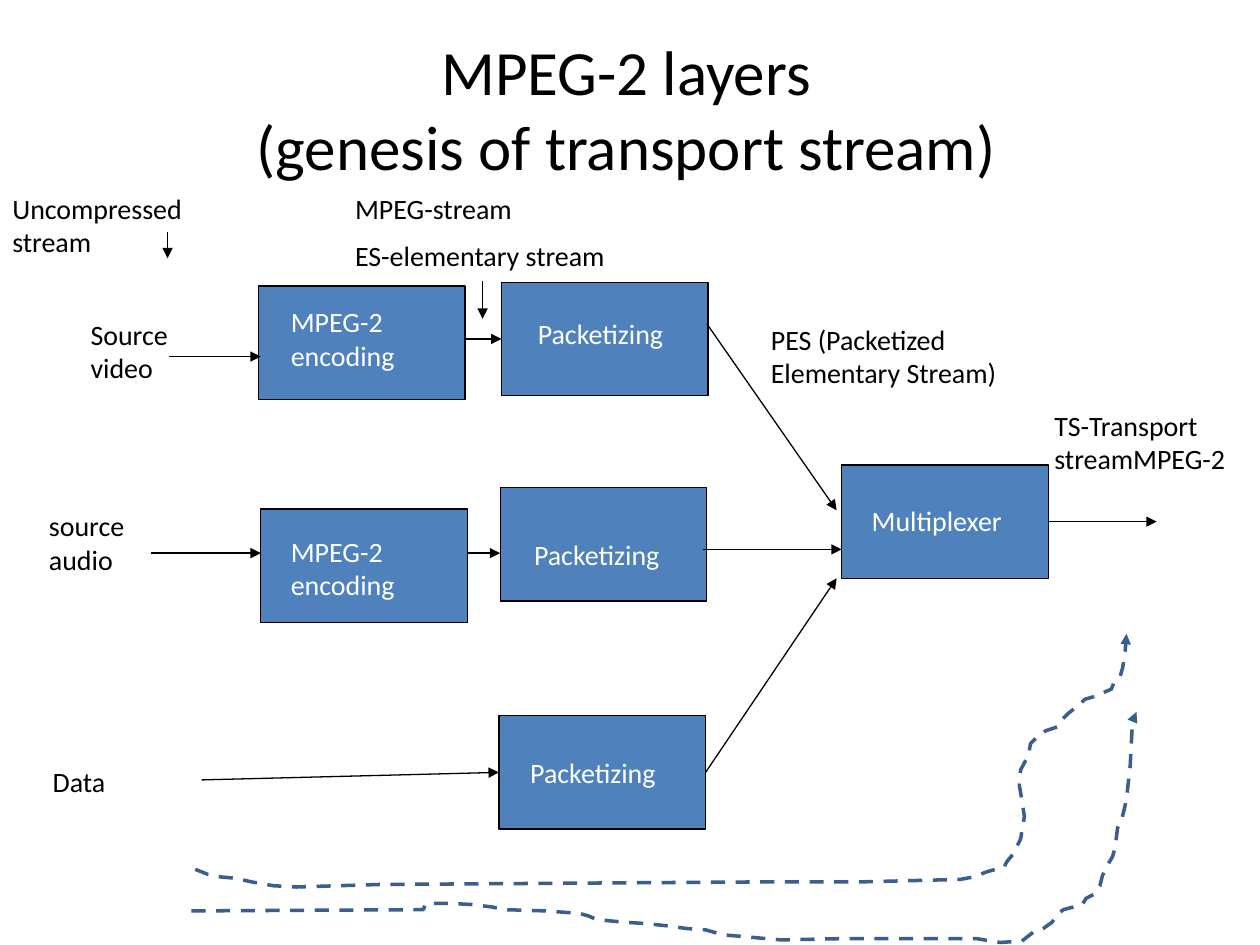
import pptx
import pptx.dml.color
import pptx.enum.dml
import pptx.enum.shapes
import pptx.enum.text
import pptx.oxml
import pptx.oxml.ns
import pptx.util
from pptx.util import Inches

THEME = {
    "font": "Calibri", "title_size": 36, "text_size": 16, "space": 8,
    "ink": "000000", "light": "FFFFFF", "box": "4F81BD", "route": "3A5F8C",
    "thin": 0.75, "thick": 2,
}
TITLE = ["MPEG-2 layers", "(genesis of transport stream)"]

BOX_SIZE = (1.64, 0.9)
BOXES = {  # name: left, top
    "video encoding": (2.05, 2.27),
    "video packetizing": (3.98, 2.24),
    "data packetizing": (3.96, 5.68),
    "audio packetizing": (3.97, 3.87),
    "multiplexer": (6.68, 3.69),
    "audio encoding": (2.07, 4.04),
}
BOX_LABELS = [  # text, left, top, height
    ("MPEG-2 encoding", 2.21, 2.37, 0.64),
    ("MPEG-2 encoding", 2.21, 4.19, 0.64),
    ("Packetizing", 4.17, 2.46, 0.37),
    ("Packetizing", 4.14, 4.22, 0.37),
    ("Packetizing", 4.11, 5.95, 0.37),
    ("Multiplexer", 6.82, 3.95, 0.37),
]
BOX_LABEL_WIDTH = 1.32
NOTES = [  # paragraphs, left, top, width, height
    (["Uncompressed stream"], 0, 1.47, 1.77, 0.64),
    (["MPEG-stream", "ES-elementary stream"], 2.72, 1.47, 2.62, 0.77),
    (["Source video"], 0.62, 2.47, 1.32, 0.64),
    (["source audio"], 0.29, 3.99, 1.32, 0.64),
    (["Data"], 0.32, 6.02, 1.65, 0.37),
    (["PES (Packetized Elementary Stream)"], 6.02, 2.51, 2.21, 0.64),
    (["TS-Transport streamMPEG-2"], 8.27, 3.19, 1.73, 0.64),
]
LEFT, RIGHT = 1, 3  # connection sites of a rectangle
ARROWS = [  # start, end, joined start, joined end
    ((1.34, 2.83), (2.07, 2.83), None, None),
    ((1.2, 4.39), (2.07, 4.39), None, None),
    ((3.69, 2.69), (3.98, 2.69), None, ("video packetizing", LEFT)),
    ((3.71, 4.39), (3.97, 4.39), None, None),
    ((5.61, 2.57), (6.64, 4.05), None, None),
    ((5.6, 6.13), (6.64, 4.59), ("data packetizing", RIGHT), None),
    ((5.58, 4.36), (6.68, 4.36), None, None),
    ((1.6, 6.19), (3.96, 6.13), None, ("data packetizing", LEFT)),
    ((1.33, 1.84), (1.33, 2.05), None, None),
    ((3.83, 2.23), (3.83, 2.53), None, None),
    ((8.32, 4.14), (9.18, 4.14), ("multiplexer", RIGHT), None),
]
ROUTES = [  # points in hundredths of an inch
    [(155, 690), (165, 694), (175, 696), (186, 697), (200, 700), (217, 703),
     (235, 704), (301, 702), (599, 700), (681, 700), (762, 698), (773, 696),
     (783, 692), (797, 688), (799, 684), (804, 678), (810, 666), (813, 648),
     (811, 635), (809, 623), (810, 611), (816, 600), (818, 590), (823, 585),
     (830, 580), (839, 577), (842, 572), (848, 566), (856, 560), (861, 555),
     (868, 553), (882, 547), (884, 542), (889, 537), (891, 530), (893, 517),
     (894, 503)],
    [(152, 723), (336, 722), (338, 717), (357, 717), (376, 718), (391, 720),
     (400, 722), (433, 723), (460, 725), (467, 727), (474, 730), (496, 732),
     (512, 733), (531, 735), (545, 737), (560, 738), (574, 742), (597, 744),
     (620, 746), (670, 745), (775, 745), (787, 747), (794, 748), (811, 747),
     (820, 740), (828, 737), (835, 732), (839, 726), (844, 722), (859, 718),
     (862, 713), (868, 710), (873, 703), (875, 695), (880, 685), (883, 680),
     (885, 673), (887, 657), (890, 652), (894, 635), (897, 608), (899, 570),
     (902, 565)],
]


def color(name):
    return pptx.dml.color.RGBColor.from_string(THEME[name])


def add_span(para, text, size, ink):
    span = para.add_run()
    span.text = text
    span.font.name = THEME["font"]
    span.font.size = pptx.util.Pt(THEME[size])
    span.font.color.rgb = color(ink)


def add_text(page, lines, place, ink):
    frame = page.shapes.add_textbox(*map(Inches, place)).text_frame
    frame.word_wrap = True
    frame.auto_size = pptx.enum.text.MSO_AUTO_SIZE.SHAPE_TO_FIT_TEXT
    for number, line in enumerate(lines):
        para = frame.add_paragraph() if number else frame.paragraphs[0]
        if number:
            para.space_before = pptx.util.Pt(THEME["space"])
        add_span(para, line, "text_size", ink)


def style_line(shape, ink, width, arrow=True):
    shape.line.color.rgb = color(ink)
    shape.line.width = pptx.util.Pt(THEME[width])
    if arrow:
        head = pptx.oxml.parse_xml(
            f'<a:tailEnd {pptx.oxml.ns.nsdecls("a")} type="triangle"/>')
        shape.line._get_or_add_ln().append(head)


def add_title(page):
    title = page.shapes.title
    title.left, title.top, title.width, title.height = map(
        Inches, (0.72, 0.23, 8.5, 1.25))
    title.text_frame.vertical_anchor = pptx.enum.text.MSO_ANCHOR.MIDDLE
    para = title.text_frame.paragraphs[0]
    para.alignment = pptx.enum.text.PP_ALIGN.CENTER
    for number, line in enumerate(TITLE):
        if number:
            para.add_line_break()
        add_span(para, line, "title_size", "ink")


def add_box(page, corner):
    box = page.shapes.add_shape(
        pptx.enum.shapes.MSO_SHAPE.RECTANGLE, *map(Inches, corner + BOX_SIZE))
    box.shadow.inherit = False
    box.fill.solid()
    box.fill.fore_color.rgb = color("box")
    style_line(box, "ink", "thin", arrow=False)
    return box


def add_arrow(page, boxes, start, end, joined_start, joined_end):
    arrow = page.shapes.add_connector(
        pptx.enum.shapes.MSO_CONNECTOR.STRAIGHT, *map(Inches, start + end))
    if joined_start:
        arrow.begin_connect(boxes[joined_start[0]], joined_start[1])
    if joined_end:
        arrow.end_connect(boxes[joined_end[0]], joined_end[1])
    style_line(arrow, "ink", "thin")
    arrow._element.spPr.append(pptx.oxml.parse_xml(
        f'<a:effectLst {pptx.oxml.ns.nsdecls("a")}/>'))


def add_route(page, points):
    builder = page.shapes.build_freeform(*points[0], scale=Inches(0.01))
    builder.add_line_segments(points[1:], close=False)
    route = builder.convert_to_shape()
    route.shadow.inherit = False
    route.fill.background()
    route.line.dash_style = pptx.enum.dml.MSO_LINE.DASH
    style_line(route, "route", "thick")


def main():
    deck = pptx.Presentation()
    deck.slide_width, deck.slide_height = Inches(10), Inches(7.5)
    page = deck.slides.add_slide(deck.slide_layouts.get_by_name("Title Only"))
    add_title(page)
    boxes = {name: add_box(page, corner) for name, corner in BOXES.items()}
    for text, left, top, height in BOX_LABELS:
        add_text(page, [text], (left, top, BOX_LABEL_WIDTH, height), "light")
    for lines, *place in NOTES:
        add_text(page, lines, place, "ink")
    for arrow in ARROWS:
        add_arrow(page, boxes, *arrow)
    for points in ROUTES:
        add_route(page, points)
    deck.save("out.pptx")


if __name__ == "__main__":
    main()
